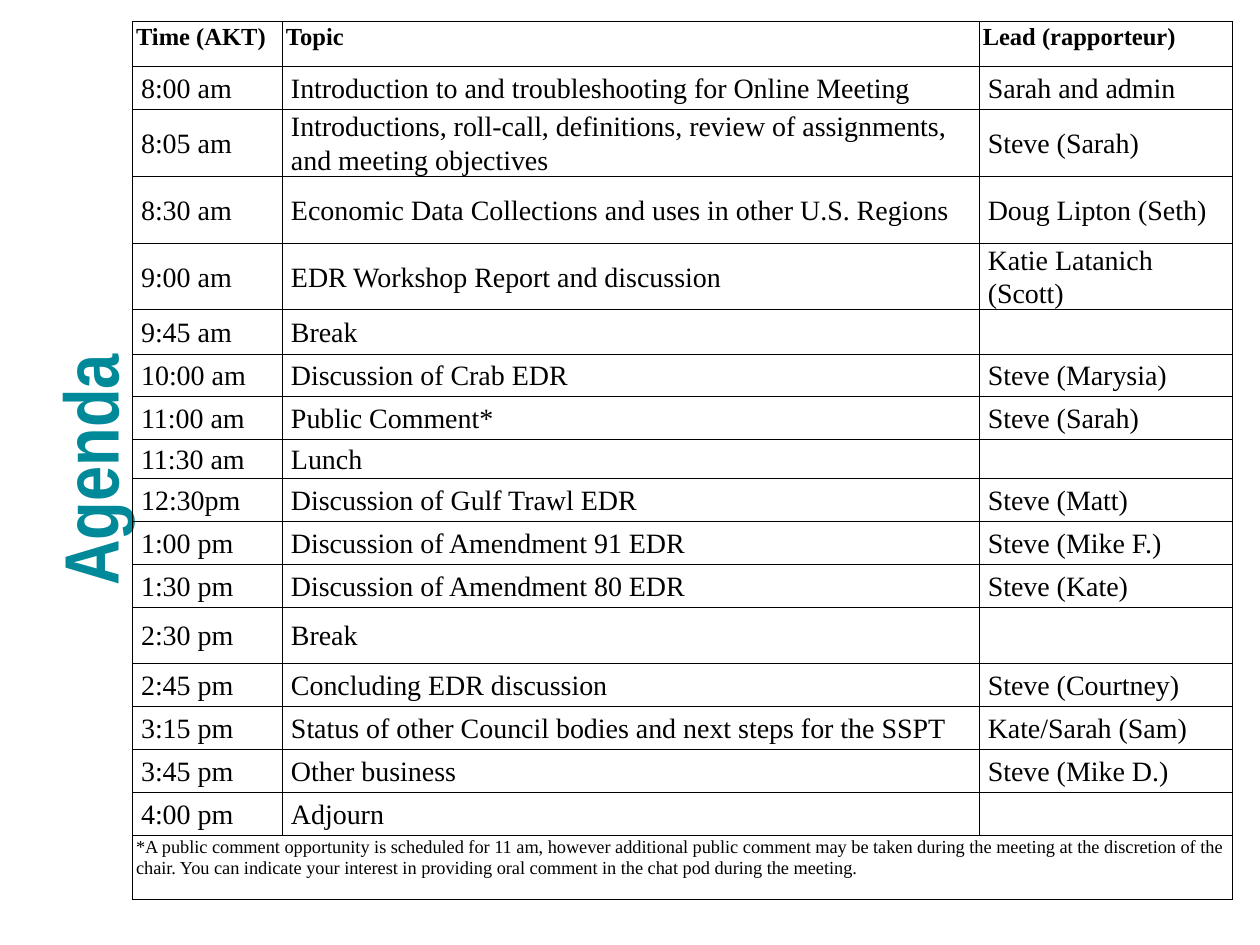
import pptx
import pptx.dml.color
import pptx.enum.text
import pptx.oxml
import pptx.oxml.ns
import pptx.util
from pptx.util import Inches, Pt

RGBColor = pptx.dml.color.RGBColor
ANCHOR = pptx.enum.text.MSO_ANCHOR
TEAL = RGBColor(0x00, 0x89, 0x98)
BLACK = RGBColor(0x00, 0x00, 0x00)

COLUMN_WIDTHS = [1.19, 5.53, 2.01]
ROW_HEIGHT = 0.34
SPECIAL_HEIGHTS = {0: 0.36, 2: 0.53, 3: 0.53, 4: 0.53, 5: 0.35, 8: 0.31, 12: 0.45, 17: 0.51}

HEADER = ("Time (AKT)", "Topic", "Lead (rapporteur)")
AGENDA = [
    ("8:00 am", "Introduction to and troubleshooting for Online Meeting", "Sarah and admin"),
    ("8:05 am", "Introductions, roll-call, definitions, review of assignments, and meeting objectives",
     "Steve (Sarah)"),
    ("8:30 am", "Economic Data Collections and uses in other U.S. Regions", "Doug Lipton (Seth)"),
    ("9:00 am", "EDR Workshop Report and discussion", "Katie Latanich (Scott)"),
    ("9:45 am", "Break", ""),
    ("10:00 am", "Discussion of Crab EDR", "Steve (Marysia)"),
    ("11:00 am", "Public Comment*", "Steve (Sarah)"),
    ("11:30 am", "Lunch", ""),
    ("12:30pm", "Discussion of Gulf Trawl EDR", "Steve (Matt)"),
    ("1:00 pm", "Discussion of Amendment 91 EDR", "Steve (Mike F.)"),
    ("1:30 pm", "Discussion of Amendment 80 EDR", "Steve (Kate)"),
    ("2:30 pm", "Break", ""),
    ("2:45 pm", "Concluding EDR discussion", "Steve (Courtney)"),
    ("3:15 pm", "Status of other Council bodies and next steps for the SSPT", "Kate/Sarah (Sam)"),
    ("3:45 pm", "Other business", "Steve (Mike D.)"),
    ("4:00 pm", "Adjourn", ""),
]
FOOTNOTE = (
    "*A public comment opportunity is scheduled for 11 am, however additional public comment "
    "may be taken during the meeting at the discretion of the chair. You can indicate your "
    "interest in providing oral comment in the chat pod during the meeting."
)


def apply(target, values):
    for name, value in values.items():
        setattr(target, name, value)


class AgendaSlide:
    """Holds the text styles and the current slide."""

    edge_cell = {"margin_left": Inches(0.03), "margin_right": Inches(0.03),
                 "margin_top": Inches(0.02), "margin_bottom": Inches(0.02),
                 "vertical_anchor": ANCHOR.TOP}
    body_cell = {"margin_left": Inches(0.07), "margin_right": Inches(0.07),
                 "margin_top": 0, "margin_bottom": 0, "vertical_anchor": ANCHOR.MIDDLE}
    # Each style: cell format, paragraph format, font format
    styles = {
        "header": (edge_cell, {}, {"size": Pt(14), "bold": True}),
        "body": (body_cell, {"line_spacing": 1.07}, {"size": Pt(16), "bold": False}),
        "footnote": (edge_cell, {"space_after": Pt(8)}, {"size": Pt(10.5), "bold": False}),
    }

    def __init__(self, deck):
        self.page = deck.slides.add_slide(deck.slide_layouts[5])

    def title(self, text, left, top, width, height):
        box = self.page.shapes.title
        apply(box, {"left": Inches(left), "top": Inches(top), "width": Inches(width),
                    "height": Inches(height), "rotation": 270})
        apply(box.text_frame, {"vertical_anchor": ANCHOR.TOP, "margin_top": Inches(0.1),
                               "margin_bottom": 0, "word_wrap": True,
                               "auto_size": pptx.enum.text.MSO_AUTO_SIZE.NONE})
        para = box.text_frame.paragraphs[0]
        para.alignment = pptx.enum.text.PP_ALIGN.LEFT
        span = para.add_run()
        span.text = text
        apply(span.font, {"name": "Arial Narrow", "size": Pt(44), "bold": True})
        span.font.color.rgb = TEAL

    def table(self, row_count, left, top):
        heights = [SPECIAL_HEIGHTS.get(row, ROW_HEIGHT) for row in range(row_count)]
        frame = self.page.shapes.add_table(
            row_count, len(COLUMN_WIDTHS), Inches(left), Inches(top),
            Inches(sum(COLUMN_WIDTHS)), Inches(sum(heights)))
        table = frame.table
        apply(table, {"first_row": False, "horz_banding": False})
        for column, width in zip(table.columns, COLUMN_WIDTHS):
            column.width = Inches(width)
        for row, height in zip(table.rows, heights):
            row.height = Inches(height)
        for cell in table.iter_cells():
            cell.fill.background()
            self.border(cell)
        return table

    def border(self, cell):
        properties = cell._tc.get_or_add_tcPr()
        for position, side in enumerate(("lnL", "lnR", "lnT", "lnB")):
            properties.insert(position, pptx.oxml.parse_xml(
                f'<a:{side} {pptx.oxml.ns.nsdecls("a")} w="{Pt(0.5)}">'
                f'<a:solidFill><a:srgbClr val="{BLACK}"/></a:solidFill></a:{side}>'))

    def cell(self, cell, text, style):
        cell_format, para_format, font_format = self.styles[style]
        apply(cell, cell_format)
        if not text:
            return
        para = cell.text_frame.paragraphs[0]
        apply(para, para_format)
        span = para.add_run()
        span.text = text
        apply(span.font, {"name": "Times New Roman", **font_format})
        span.font.color.rgb = BLACK


def main():
    deck = pptx.Presentation()
    deck.slide_width, deck.slide_height = Inches(10), Inches(7.5)
    slide = AgendaSlide(deck)

    # Sideways title
    slide.title("Agenda", -1.02, 2.76, 3.24, 0.74)

    # Schedule with header row
    rows = [HEADER] + AGENDA
    table = slide.table(len(rows) + 1, 1.05, 0.17)
    for row, texts in enumerate(rows):
        for column, text in enumerate(texts):
            slide.cell(table.cell(row, column), text, "body" if row else "header")

    # Footnote across the last row
    last = len(rows)
    table.cell(last, 0).merge(table.cell(last, len(COLUMN_WIDTHS) - 1))
    slide.cell(table.cell(last, 0), FOOTNOTE, "footnote")

    deck.save("out.pptx")


if __name__ == "__main__":
    main()
